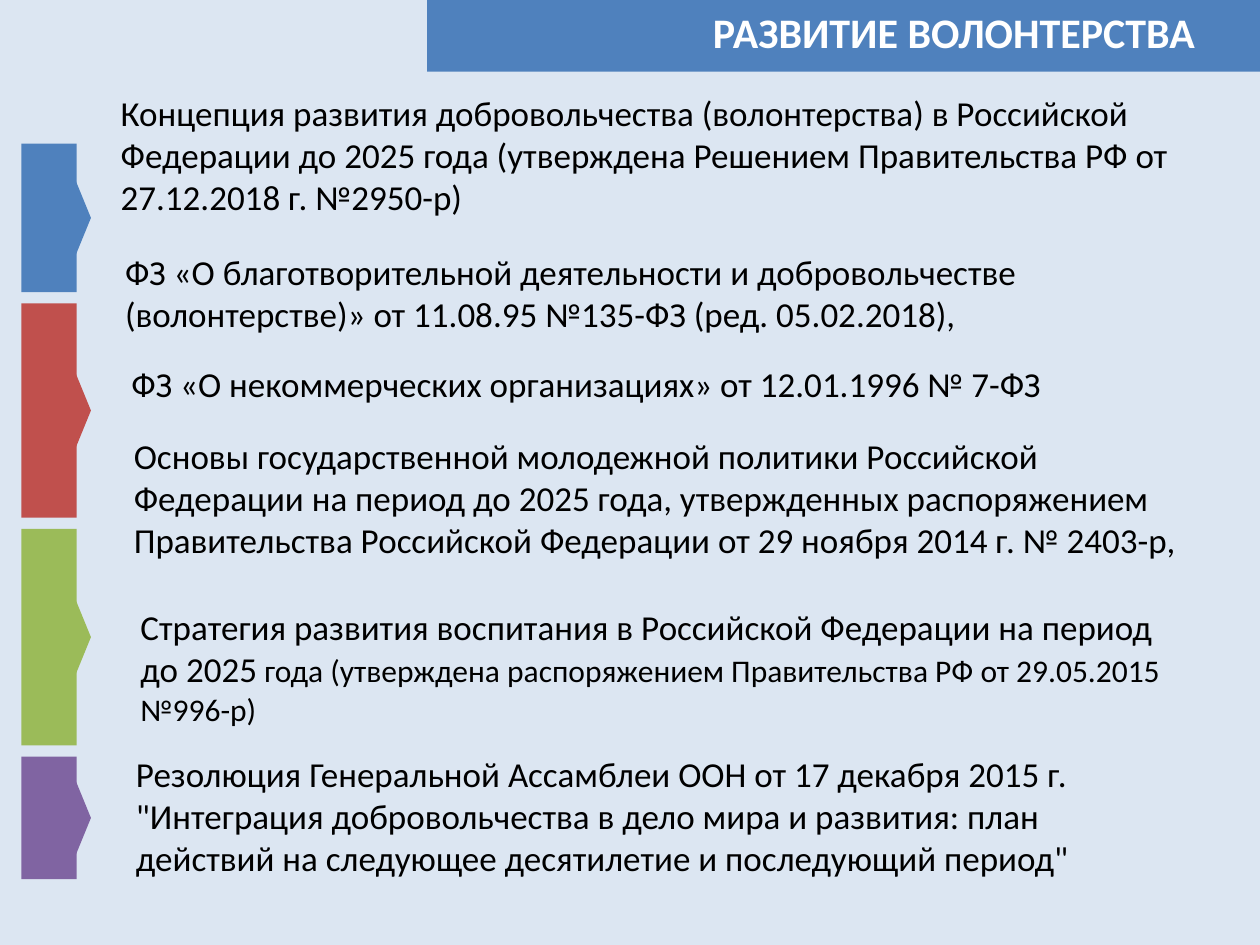
from dataclasses import dataclass

from pptx import Presentation
from pptx.dml.color import RGBColor as Color
from pptx.enum.shapes import MSO_SHAPE as Shape
from pptx.enum.text import MSO_AUTO_SIZE as AutoSize
from pptx.util import Pt


@dataclass(frozen=True)
class Theme:
    font: str = "Calibri"
    background: str = "DCE6F2"
    banner: str = "4F81BD"
    title_color: str = "FFFFFF"
    text_color: str = "000000"
    title_size: int = 24
    body_size: int = 20
    small_size: int = 18


theme = Theme()

TITLE = "РАЗВИТИЕ ВОЛОНТЕРСТВА"

MARKERS = [("4F81BD", 85), ("C0504D", 122.4), ("9BBB59", 123.8), ("8064A2", 70)]
MARKER_LEFT, MARKER_TOP, MARKER_WIDTH, MARKER_GAP = 12.2, 82, 31.6, 6.4
TIP_LEFT, TIP_RIGHT, TIP_HEIGHT = 43.2, 52, 43

DOCUMENTS = [
    ((61.9, 49, 623.5, 80),
     ["Концепция развития добровольчества (волонтерства) в Российской Федерации "
      "до 2025 года (утверждена Решением Правительства РФ от 27.12.2018 г. №2950-р)"]),
    ((64.4, 139.7, 623.5, 55.7),
     ["ФЗ «О благотворительной деятельности и добровольчестве (волонтерстве)» "
      "от 11.08.95 №135-ФЗ (ред. 05.02.2018),"]),
    ((68, 203.8, 608.4, 31.5),
     ["ФЗ «О некоммерческих организациях» от 12.01.1996 № 7-ФЗ"]),
    ((69.4, 244.8, 623.5, 80),
     ["Основы государственной молодежной политики Российской Федерации на период "
      "до 2025 года, утвержденных распоряжением Правительства Российской Федерации "
      "от 29 ноября 2014 г. № 2403-р,"]),
    ((73.2, 342.7, 613.4, 77.8),
     ["Стратегия развития воспитания в Российской Федерации на период до 2025",
      " года (утверждена распоряжением Правительства РФ от 29.05.2015 №996-р)"]),
    ((70.6, 426.4, 589.7, 80),
     ["Резолюция Генеральной Ассамблеи ООН от 17 декабря 2015 г. \"Интеграция "
      "добровольчества в дело мира и развития: план действий на следующее "
      "десятилетие и последующий период\""]),
]


def paint(shape, color):
    shape.shadow.inherit = False
    shape.fill.solid()
    shape.fill.fore_color.rgb = Color.from_string(color)
    shape.line.fill.background()


def add_block(shapes, area, color):
    block = shapes.add_shape(Shape.RECTANGLE, *map(Pt, area))
    paint(block, color)


def add_tip(shapes, middle, color):
    half = TIP_HEIGHT / 2
    corners = [(TIP_LEFT, middle + half), (TIP_LEFT, middle - half)]
    builder = shapes.build_freeform(Pt(TIP_RIGHT), Pt(middle))
    builder.add_line_segments([(Pt(x), Pt(y)) for x, y in corners], close=True)
    paint(builder.convert_to_shape(), color)


def add_text(page, area, texts, sizes, color=theme.text_color, bold=False, wrap=True):
    box = page.shapes.add_textbox(*map(Pt, area))
    frame = box.text_frame
    frame.word_wrap = wrap
    frame.auto_size = AutoSize.SHAPE_TO_FIT_TEXT
    para = frame.paragraphs[0]
    for text, size in zip(texts, sizes):
        span = para.add_run()
        span.text = text
        span.font.name = theme.font
        span.font.size = Pt(size)
        span.font.bold = bold
        span.font.color.rgb = Color.from_string(color)


def add_markers(page):
    group = page.shapes.add_group_shape()
    top = MARKER_TOP
    for color, height in MARKERS:
        add_block(group.shapes, (MARKER_LEFT, top, MARKER_WIDTH, height), color)
        add_tip(group.shapes, top + height / 2, color)
        top += height + MARKER_GAP


def main():
    deck = Presentation()
    deck.slide_width, deck.slide_height = Pt(720), Pt(540)
    page = deck.slides.add_slide(deck.slide_layouts[6])
    page.background.fill.solid()
    page.background.fill.fore_color.rgb = Color.from_string(theme.background)

    add_markers(page)
    add_block(page.shapes, (244, -2.2, 478.8, 43.2), theme.banner)
    add_text(page, (400.3, 0, 293, 36), [TITLE], [theme.title_size],
             color=theme.title_color, bold=True, wrap=False)
    for area, texts in DOCUMENTS:
        add_text(page, area, texts, [theme.body_size, theme.small_size])

    deck.save("out.pptx")


if __name__ == "__main__":
    main()
